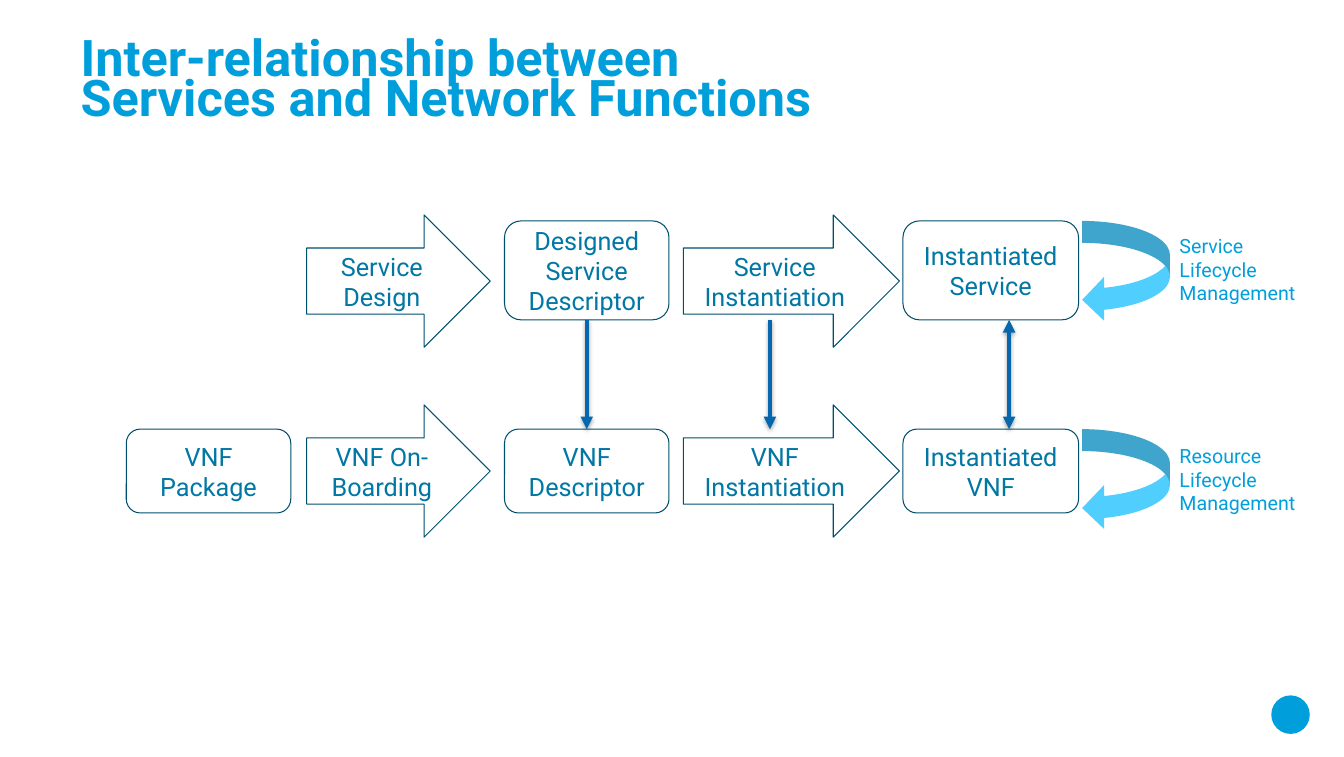
from dataclasses import dataclass

from pptx import Presentation
from pptx.dml.color import RGBColor
from pptx.enum.shapes import MSO_CONNECTOR, MSO_SHAPE
from pptx.enum.text import MSO_ANCHOR, PP_ALIGN
from pptx.oxml import parse_xml
from pptx.oxml.ns import nsdecls
from pptx.util import Cm, Pt

# Content
TITLE = "Inter-relationship between\vServices and Network Functions"
SERVICE_STEPS = {
    "design": ["Service", "Design"],
    "descriptor": ["Designed", "Service", "Descriptor"],
    "instantiation": ["Service", "Instantiation"],
    "instance": ["Instantiated", "Service"],
    "loop": ["Service", "Lifecycle", "Management"],
}
VNF_STEPS = {
    "package": ["VNF", "Package"],
    "design": ["VNF On-Boarding"],
    "descriptor": ["VNF", "Descriptor"],
    "instantiation": ["VNF", "Instantiation"],
    "instance": ["Instantiated", "VNF"],
    "loop": ["Resource", "Lifecycle", "Management"],
}

# Layout in centimetres: columns as (left, width), rows by part
COLUMNS = {
    "package": (3.18, 4.14),
    "design": (7.72, 4.62),
    "descriptor": (12.7, 4.14),
    "instantiation": (17.2, 5.44),
    "instance": (22.73, 4.42),
    "loop": (27.24, 2.21),
}
ARROW_STEPS = ("design", "instantiation")
ARROW_HEIGHT, LOOP_HEIGHT = 3.33, 2.54
LABEL_LEFT, LABEL_WIDTH, LABEL_HEIGHT = 29.69, 2.97, 1.8
ROWS = [
    {"steps": SERVICE_STEPS, "box_top": 5.56, "box_height": 2.49,
     "arrow_top": 5.41, "label_top": 5.89},
    {"steps": VNF_STEPS, "box_top": 10.8, "box_height": 2.11,
     "arrow_top": 10.19, "label_top": 11.18},
]


@dataclass(frozen=True)
class Theme:
    font: str = "Roboto"
    accent: RGBColor = RGBColor(0x00, 0x9F, 0xDB)
    step_text: RGBColor = RGBColor(0x00, 0x77, 0xA4)
    outline: RGBColor = RGBColor(0x00, 0x4F, 0x6E)
    link: RGBColor = RGBColor(0x05, 0x68, 0xAE)
    loop: RGBColor = RGBColor(0x50, 0xCF, 0xFF)
    title_size: Pt = Pt(36)
    title_spacing: Pt = Pt(28.8)
    step_size: Pt = Pt(18)
    label_size: Pt = Pt(14)
    outline_width: Pt = Pt(0.75)
    link_width: Pt = Pt(3)


THEME = Theme()


def write(frame, lines, size, color, align=PP_ALIGN.LEFT):
    for index, line in enumerate(lines):
        para = frame.paragraphs[0] if index == 0 else frame.add_paragraph()
        para.text = line
        para.alignment = align
        para.font.name = THEME.font
        para.font.size = size
        para.font.color.rgb = color


def add_text(page, place, wrap, anchor):
    frame = page.shapes.add_textbox(*map(Cm, place)).text_frame
    frame.margin_left = frame.margin_right = 0
    frame.margin_top = frame.margin_bottom = 0
    frame.word_wrap = wrap
    frame.vertical_anchor = anchor
    return frame


def add_step(page, kind, place, lines):
    step = page.shapes.add_shape(kind, *map(Cm, place))
    step.shadow.inherit = False
    step.fill.background()
    step.line.color.rgb = THEME.outline
    step.line.width = THEME.outline_width
    step.text_frame.word_wrap = True
    step.text_frame.vertical_anchor = MSO_ANCHOR.MIDDLE
    write(step.text_frame, lines, THEME.step_size, THEME.step_text,
          PP_ALIGN.CENTER)
    return step


def add_solid(page, kind, place, color):
    solid = page.shapes.add_shape(kind, *map(Cm, place))
    solid.shadow.inherit = False
    solid.fill.solid()
    solid.fill.fore_color.rgb = color
    solid.line.fill.background()


def add_link(page, x, top, bottom, ends=("tailEnd",)):
    link = page.shapes.add_connector(
        MSO_CONNECTOR.STRAIGHT, Cm(x), Cm(top), Cm(x), Cm(bottom))
    link.line.color.rgb = THEME.link
    link.line.width = THEME.link_width
    for end in ends:
        link.line._get_or_add_ln().append(
            parse_xml(f'<a:{end} {nsdecls("a")} type="triangle"/>'))
    # Soft shadow straight below the line
    link._element.spPr.append(parse_xml(
        f'<a:effectLst {nsdecls("a")}>'
        f'<a:outerShdw blurRad="{Pt(3.1)}" dist="{Pt(1.8)}" dir="5400000">'
        '<a:srgbClr val="000000"><a:alpha val="35000"/></a:srgbClr>'
        '</a:outerShdw></a:effectLst>'))
    return link


def add_row(page, row):
    boxes = {}
    for name, lines in row["steps"].items():
        left, width = COLUMNS[name]
        if name == "loop":
            add_solid(page, MSO_SHAPE.CURVED_LEFT_ARROW,
                      (left, row["box_top"], width, LOOP_HEIGHT), THEME.loop)
            label = add_text(
                page, (LABEL_LEFT, row["label_top"], LABEL_WIDTH, LABEL_HEIGHT),
                False, MSO_ANCHOR.TOP)
            write(label, lines, THEME.label_size, THEME.accent)
        elif name in ARROW_STEPS:
            add_step(page, MSO_SHAPE.RIGHT_ARROW,
                     (left, row["arrow_top"], width, ARROW_HEIGHT), lines)
        else:
            boxes[name] = add_step(
                page, MSO_SHAPE.ROUNDED_RECTANGLE,
                (left, row["box_top"], width, row["box_height"]), lines)
    return boxes


def main():
    deck = Presentation()
    deck.slide_width, deck.slide_height = Cm(33.83), Cm(19.05)
    page = deck.slides.add_slide(deck.slide_layouts[6])

    # Corner mark and title
    add_solid(page, MSO_SHAPE.OVAL, (32, 17.5, 0.97, 0.97), THEME.accent)
    title = add_text(page, (2.03, 1.09, 29.77, 2.16), True, MSO_ANCHOR.MIDDLE)
    write(title, [TITLE], THEME.title_size, THEME.accent)
    title.paragraphs[0].font.bold = True
    title.paragraphs[0].line_spacing = THEME.title_spacing

    # Service row above, network function row below
    service, vnf = [add_row(page, row) for row in ROWS]

    # Links between the rows
    top = ROWS[0]["box_top"] + ROWS[0]["box_height"]
    bottom = ROWS[1]["box_top"]
    left, width = COLUMNS["descriptor"]
    descriptor_link = add_link(page, left + width / 2, top, bottom)
    descriptor_link.begin_connect(service["descriptor"], 2)
    descriptor_link.end_connect(vnf["descriptor"], 0)
    add_link(page, 19.38, top, bottom)
    add_link(page, 25.4, top, bottom, ("headEnd", "tailEnd"))

    deck.save("out.pptx")


if __name__ == "__main__":
    main()
